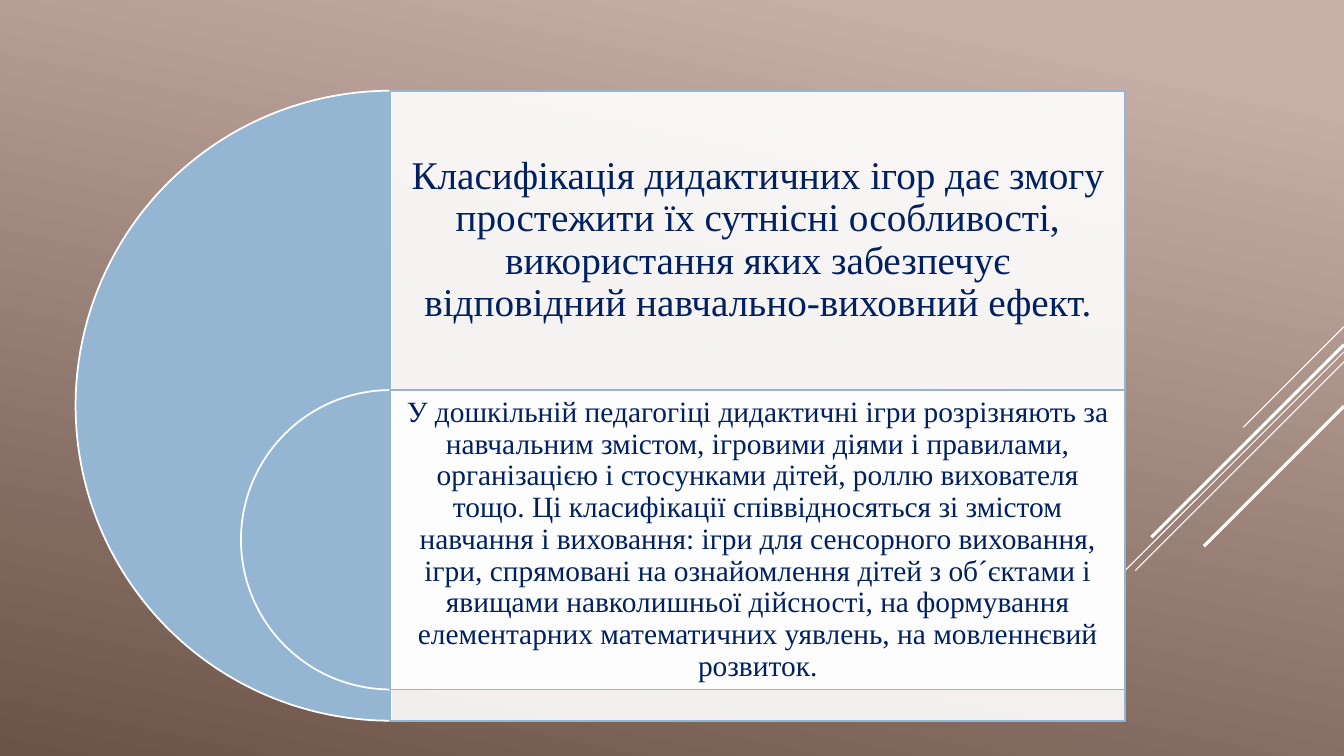
from lxml import etree
from pptx import Presentation, util as u
from pptx.dml.color import RGBColor
from pptx.enum import shapes, text
from pptx.oxml.ns import qn

PX = 9144  # 100 px to the inch
WIDE, HIGH = 1333, 750
COLORS = {"light": "C7AFA7", "dark": "6C5348", "white": "FFFFFF",
          "blue": "94B6D2", "navy": "002060"}
FONT = "Times New Roman"

# Diagonal rays from the right edge: start y, run to the left, weight
RAYS = [(324, 100, 0.75), (349, 326, 0.75), (359, 207, 0.75),
        (342, 191, 2.25), (403, 139, 2.25)]

LEFT, CARD = 387, 729  # shared edge of discs and cards, card width
ROW = 297  # height of each text row
# Top, disc size, text size, text inset, words
LEVELS = [
    (90, 625, 28, 12,
     "Класифікація дидактичних ігор дає змогу простежити їх сутнісні "
     "особливості, використання яких забезпечує відповідний "
     "навчально-виховний ефект."),
    (387, ROW, 21, 9,
     "У дошкільній педагогіці дидактичні ігри розрізняють за навчальним "
     "змістом, ігровими діями і правилами, організацією і стосунками дітей, "
     "роллю вихователя тощо. Ці класифікації співвідносяться зі змістом "
     "навчання і виховання: ігри для сенсорного виховання, ігри, спрямовані "
     "на ознайомлення дітей з об´єктами і явищами навколишньої дійсності, "
     "на формування елементарних математичних уявлень, на мовленнєвий "
     "розвиток."),
]


def rgb(name):
    return RGBColor.from_string(COLORS[name])


def emu(*sizes):
    return [u.Emu(size * PX) for size in sizes]


def add_ray(slide, top, run, weight):
    ray = slide.shapes.add_connector(
        shapes.MSO_CONNECTOR.STRAIGHT, *emu(WIDE, top, WIDE - run, top + run))
    ray.line.color.rgb = rgb("white")
    ray.line.width = u.Pt(weight)
    etree.SubElement(ray._element.spPr, qn("a:effectLst"))


def add_form(slide, kind, box, fill, line, alpha=100):
    form = slide.shapes.add_shape(kind, *emu(*box))
    form.shadow.inherit = False
    form.fill.solid()
    form.fill.fore_color.rgb = rgb(fill)
    form.line.color.rgb = rgb(line)
    form.line.width = u.Pt(1.25)
    if alpha < 100:
        color = form._element.spPr.find(qn("a:solidFill"))[0]
        etree.SubElement(color, qn("a:alpha"), val=str(alpha * 1000))
    return form


def add_text(slide, words, box, size, inset, color="navy"):
    frame = slide.shapes.add_textbox(*emu(*box)).text_frame
    frame.word_wrap = True
    frame.vertical_anchor = text.MSO_ANCHOR.MIDDLE
    for side in ("left", "top", "right", "bottom"):
        setattr(frame, f"margin_{side}", u.Emu(inset * PX))
    para = frame.paragraphs[0]
    para.alignment = text.PP_ALIGN.CENTER
    para.line_spacing = 0.9
    run = para.add_run()
    run.text = words
    run.font.size = u.Pt(size)
    run.font.name = FONT
    run.font.color.rgb = rgb(color)


def paint_back(slide):
    fill = slide.background.fill
    fill.gradient()
    fill.gradient_angle = 258
    for stop, name, place in zip(fill.gradient_stops, ("light", "dark"), (0.1, 1)):
        stop.color.rgb = rgb(name)
        stop.position = place


def main():
    deck = Presentation()
    deck.slide_width, deck.slide_height = emu(WIDE, HIGH)
    slide = deck.slides.add_slide(deck.slide_layouts[6])
    paint_back(slide)
    for ray in RAYS:
        add_ray(slide, *ray)
    for top, disc, size, inset, words in LEVELS:
        half = add_form(slide, shapes.MSO_SHAPE.PIE,
                        (LEFT - disc // 2, top, disc, disc), "blue", "white")
        half.adjustments[0] = 54  # quarter turn to three quarters: left half
        half.adjustments[1] = 162
        add_form(slide, shapes.MSO_SHAPE.RECTANGLE,
                 (LEFT, top, CARD, disc), "white", "blue", alpha=90)
        add_text(slide, words, (LEFT, top, CARD, ROW), size, inset)
    deck.save("out.pptx")


if __name__ == "__main__":
    main()
